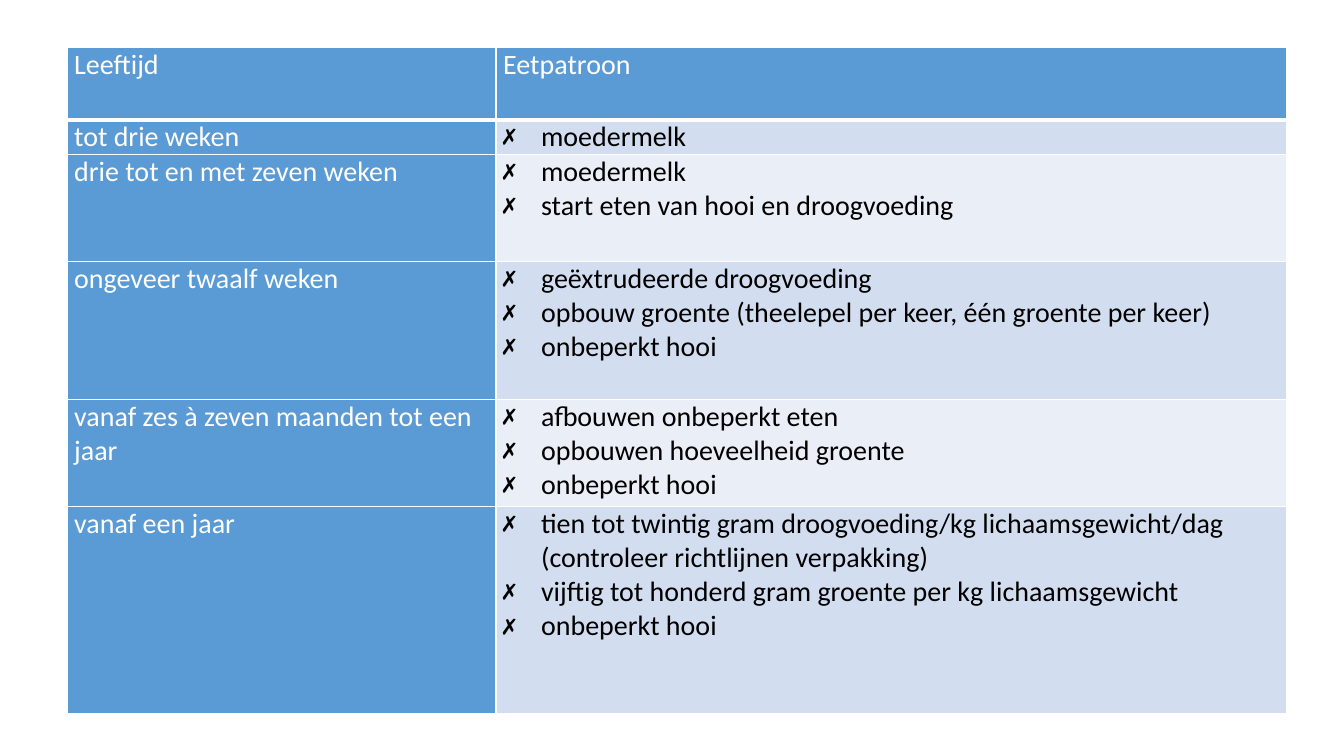
from lxml import etree
from pptx import Presentation
from pptx import util as u
from pptx.dml import color
from pptx.oxml import ns

COLORS = {
    "accent": "5B9BD5",
    "band_dark": "D2DEEF",
    "band_light": "EAEFF7",
    "white": "FFFFFF",
    "black": "000000",
}
HEADERS = ("Leeftijd", "Eetpatroon")
FEEDING = [
    ("tot drie weken", ["moedermelk"]),
    ("drie tot en met zeven weken",
     ["moedermelk", "start eten van hooi en droogvoeding"]),
    ("ongeveer twaalf weken",
     ["geëxtrudeerde droogvoeding",
      "opbouw groente (theelepel per keer, één groente per keer)",
      "onbeperkt hooi"]),
    ("vanaf zes à zeven maanden tot een jaar",
     ["afbouwen onbeperkt eten", "opbouwen hoeveelheid groente",
      "onbeperkt hooi"]),
    ("vanaf een jaar",
     ["tien tot twintig gram droogvoeding/kg lichaamsgewicht/dag "
      "(controleer richtlijnen verpakking)",
      "vijftig tot honderd gram groente per kg lichaamsgewicht",
      "onbeperkt hooi"]),
]
COLUMN_WIDTHS = (306.5, 564.5)
ROW_HEIGHTS = (51.5, 24.6, 76.4, 98.6, 76.4, 148.3)
BULLET_INDENT = 27


def rgb(name):
    """Return the named colour."""
    return color.RGBColor.from_string(COLORS[name])


def add_borders(cell, bottom_width):
    """Draw white lines on the four sides of a cell."""
    properties = cell._tc.get_or_add_tcPr()
    for side in "LRTB":
        width = bottom_width if side == "B" else 1
        line = etree.SubElement(properties, ns.qn(f"a:ln{side}"), w=str(u.Pt(width)))
        fill = etree.SubElement(line, ns.qn("a:solidFill"))
        etree.SubElement(fill, ns.qn("a:srgbClr"), val=COLORS["white"])


def add_bullet(paragraph):
    """Give a paragraph a cross as bullet and a hanging indent."""
    properties = paragraph._p.get_or_add_pPr()
    indent = u.Pt(BULLET_INDENT)
    properties.set("marL", str(indent))
    properties.set("indent", str(-indent))
    bullet = etree.Element(ns.qn("a:buChar"), char="✗")
    properties.insert(0, bullet)


def fill_cell(cell, lines, fill, font_color, bulleted=False, bottom_width=1):
    """Write lines into a cell and set its look."""
    add_borders(cell, bottom_width)
    cell.fill.solid()
    cell.fill.fore_color.rgb = rgb(fill)
    cell.margin_left = cell.margin_right = u.Pt(5.2)
    cell.margin_top = cell.margin_bottom = 0
    cell.text = "\n".join(lines)
    for paragraph in cell.text_frame.paragraphs:
        font = paragraph.font
        font.name = "Calibri"
        font.size = u.Pt(20)
        font.bold = False
        font.color.rgb = rgb(font_color)
        if bulleted:
            add_bullet(paragraph)


def add_feeding_table(slide):
    """Add the table of feeding patterns by age."""
    shape = slide.shapes.add_table(
        len(ROW_HEIGHTS), len(COLUMN_WIDTHS), u.Pt(47.8), u.Pt(34.2),
        u.Pt(sum(COLUMN_WIDTHS)), u.Pt(sum(ROW_HEIGHTS)))
    table = shape.table
    table.horz_banding = False
    for column, width in zip(table.columns, COLUMN_WIDTHS):
        column.width = u.Pt(width)
    for row, height in zip(table.rows, ROW_HEIGHTS):
        row.height = u.Pt(height)
    for index, header in enumerate(HEADERS):
        fill_cell(table.cell(0, index), [header], "accent", "white", bottom_width=3)
    for index, (age, foods) in enumerate(FEEDING, start=1):
        band = "band_dark" if index % 2 else "band_light"
        fill_cell(table.cell(index, 0), [age], "accent", "white")
        fill_cell(table.cell(index, 1), foods, band, "black", bulleted=True)


def main():
    """Build the slide and save it."""
    presentation = Presentation()
    presentation.slide_width = u.Pt(960)
    presentation.slide_height = u.Pt(540)
    slide = presentation.slides.add_slide(presentation.slide_layouts[6])
    add_feeding_table(slide)
    presentation.save("out.pptx")


if __name__ == "__main__":
    main()
